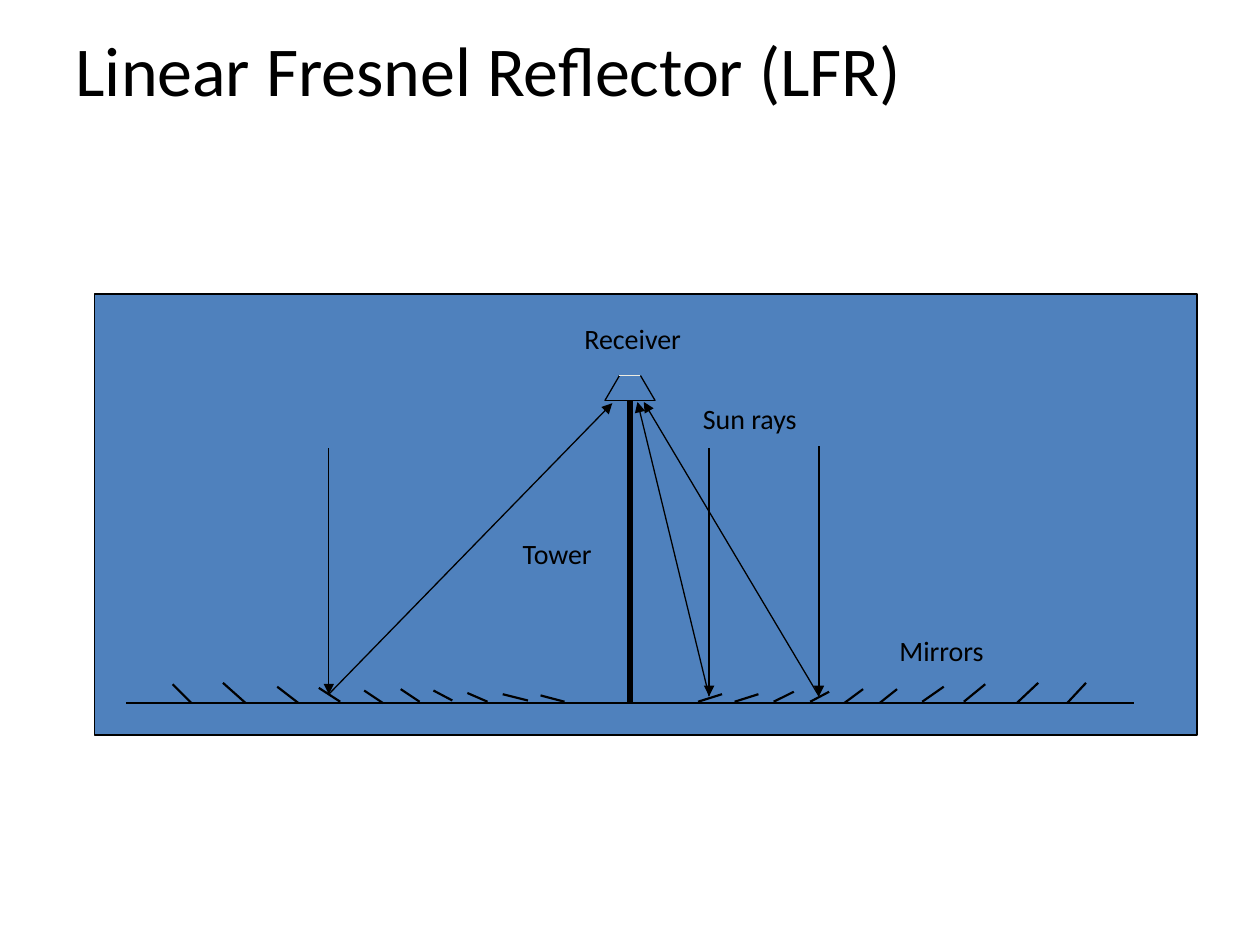
"""Draw a slide explaining the linear Fresnel reflector."""
from dataclasses import dataclass

from lxml.etree import SubElement
from pptx import Presentation
from pptx.dml.color import RGBColor
from pptx.enum.shapes import MSO_CONNECTOR, MSO_SHAPE
from pptx.enum.text import MSO_ANCHOR
from pptx.oxml.ns import qn
from pptx.util import Pt


@dataclass(frozen=True)
class Theme:
    font: str = "Calibri"
    ink: RGBColor = RGBColor(0x00, 0x00, 0x00)
    sky: RGBColor = RGBColor(0x4F, 0x81, 0xBD)
    glass: RGBColor = RGBColor(0xEE, 0xEC, 0xE1)
    title_size: float = 40
    label_size: float = 16
    thin: float = 0.75
    frame: float = 1
    mirror: float = 1.25
    tower: float = 3


class Page:
    def __init__(self, deck, theme):
        self.theme = theme
        self.shapes = deck.slides.add_slide(deck.slide_layouts[6]).shapes

    def panel(self, left, top, width, height):
        panel = self.shapes.add_shape(
            MSO_SHAPE.RECTANGLE, Pt(left), Pt(top), Pt(width), Pt(height))
        panel.shadow.inherit = False
        panel.fill.solid()
        panel.fill.fore_color.rgb = self.theme.sky
        panel.line.color.rgb = self.theme.ink
        panel.line.width = Pt(self.theme.frame)

    def text(self, words, left, top, width, height, size, inset=(7.2, 3.6)):
        box = self.shapes.add_textbox(Pt(left), Pt(top), Pt(width), Pt(height))
        frame = box.text_frame
        frame.word_wrap = True
        frame.vertical_anchor = MSO_ANCHOR.TOP
        frame.margin_left = frame.margin_right = Pt(inset[0])
        frame.margin_top = frame.margin_bottom = Pt(inset[1])
        span = frame.paragraphs[0].add_run()
        span.text = words
        span.font.name = self.theme.font
        span.font.size = Pt(size)
        span.font.color.rgb = self.theme.ink

    def line(self, start, end, width, color=None, arrow=False):
        line = self.shapes.add_connector(
            MSO_CONNECTOR.STRAIGHT, *(Pt(value) for value in (*start, *end)))
        line.line.width = Pt(width)
        line.line.color.rgb = color or self.theme.ink
        properties = line._element.spPr
        if arrow:
            SubElement(properties.find(qn("a:ln")), qn("a:tailEnd"), type="triangle")
        SubElement(properties, qn("a:effectLst"))


LEFT_MIRRORS = [
    (98.6, 391, 109.4, 401.8), (127.4, 390.2, 140.4, 401.8),
    (158.4, 392.4, 170.6, 401.8), (182.2, 393.1, 194.4, 401),
    (208.1, 394.6, 218.9, 401.8), (229, 393.8, 239.8, 401),
    (247.7, 394.6, 258.5, 400.3), (267.1, 396, 278.6, 401),
    (287.3, 396.7, 301.7, 400.3), (308.9, 397.4, 322.6, 401),
]
RIGHT_MIRRORS = [
    (412.6, 396.7, 398.9, 401), (433.4, 396.7, 419.8, 401),
    (453.6, 395.3, 442.1, 401), (473.8, 395.3, 463, 401),
    (493.2, 393.8, 482.4, 401.8), (512.6, 393.8, 502.6, 401.8),
    (539.3, 392.4, 527, 401), (563, 391, 550.8, 401),
    (593.3, 390.2, 581, 401.8), (620.6, 390.2, 609.8, 401.8),
]
RAYS = [
    ((187.9, 256.3), (187.9, 396.7), (349.9, 230.4)),
    ((405.2, 256.3), (405.2, 397.8), (364.3, 229.7)),
    ((468, 254.9), (468, 397.8), (367.9, 229.7)),
]
LABELS = [
    ("Sun rays", 394.6, 226.1, 117.4, 36),
    ("Receiver", 326.9, 180, 117.4, 36),
    ("Tower", 291.6, 303.1, 86.4, 36),
    ("Mirrors", 506.9, 358.6, 101.5, 43.2),
]


def main():
    theme = Theme()
    deck = Presentation()
    deck.slide_width, deck.slide_height = Pt(720), Pt(540)
    page = Page(deck, theme)
    page.panel(54, 168, 630, 252)
    page.text("Linear Fresnel Reflector (LFR)", 43.2, 15.1, 634.3, 97.9,
              theme.title_size, inset=(0, 0))

    center, ground, receiver_base, receiver_top = 360, 401.8, 229, 214.6
    page.line((72, ground), (648, ground), theme.thin)
    page.line((center, ground), (center, receiver_base), theme.tower)
    page.line((center - 14.4, receiver_base), (center + 14.4, receiver_base), theme.thin)
    for side in (-1, 1):
        page.line((center + side * 14.4, receiver_base),
                  (center + side * 6, receiver_top), theme.thin)
    for sun, mirror, receiver in RAYS:
        page.line(sun, mirror, theme.thin, arrow=True)
        page.line(mirror, receiver, theme.thin, arrow=True)
    for top_x, top_y, foot_x, foot_y in LEFT_MIRRORS + RIGHT_MIRRORS:
        page.line((top_x, top_y), (foot_x, foot_y), theme.mirror)
    for label in LABELS:
        page.text(*label, theme.label_size)
    page.line((center - 6, receiver_top), (center + 6, receiver_top),
              theme.frame, theme.glass)
    deck.save("out.pptx")


if __name__ == "__main__":
    main()
